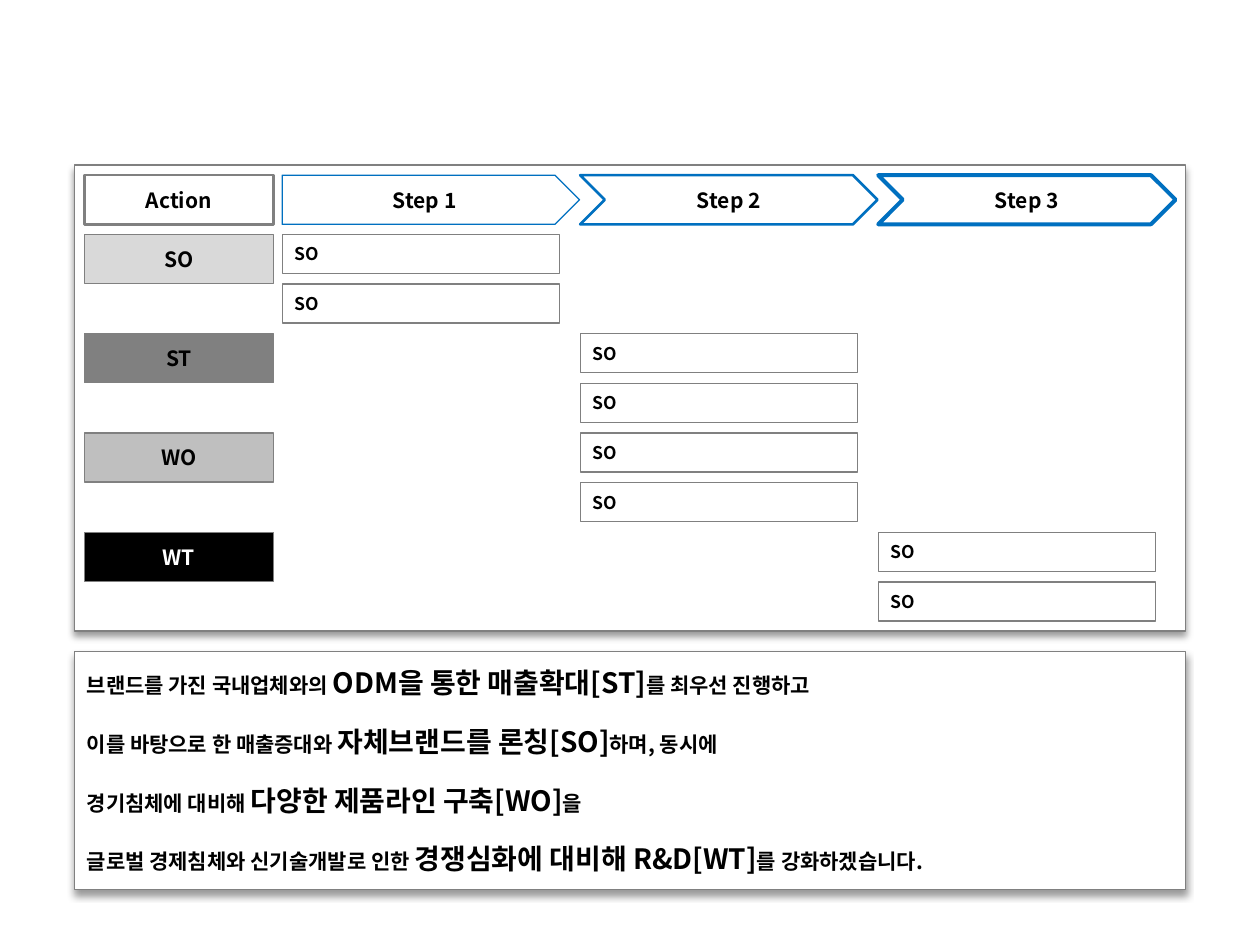
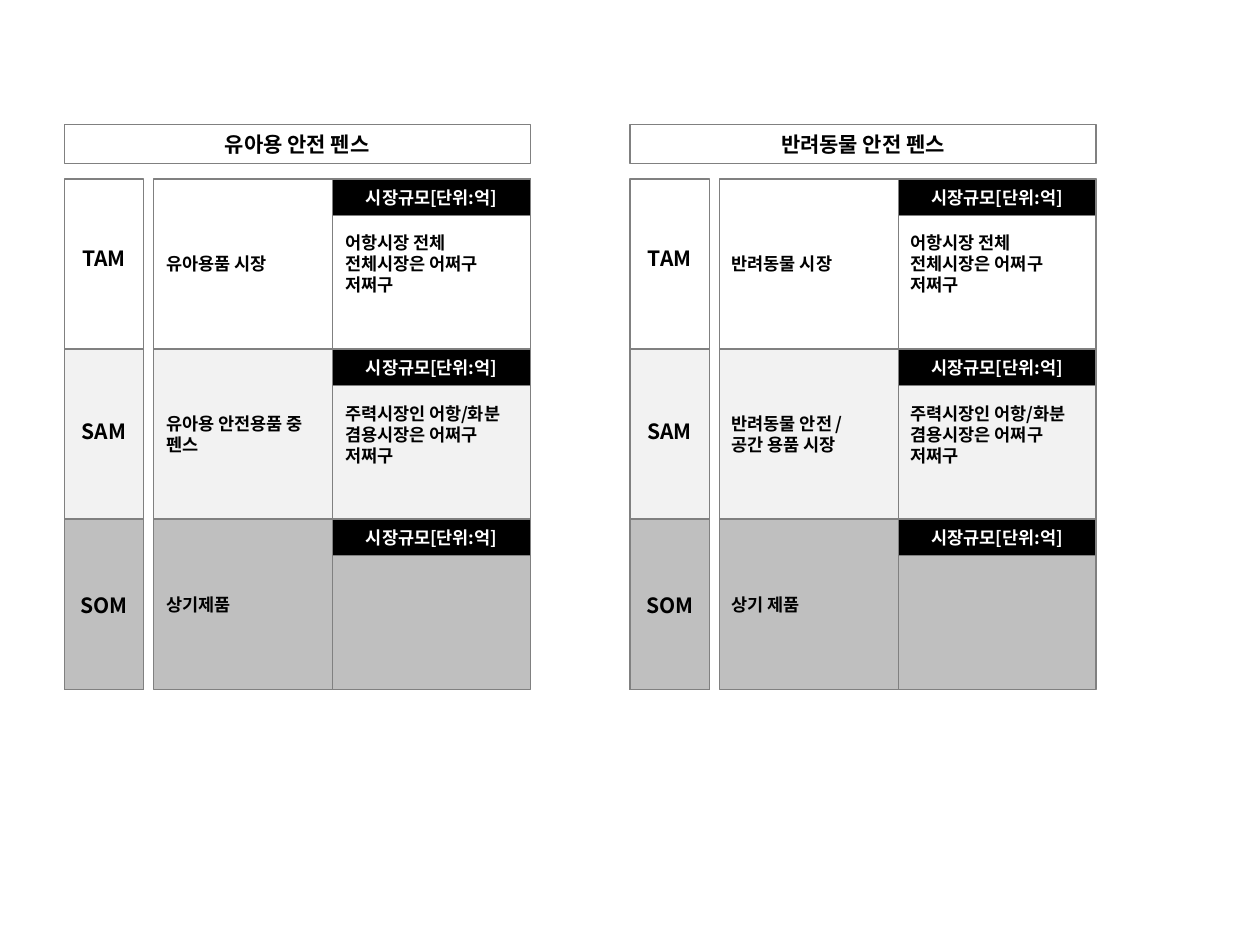
from lxml import etree
from pptx import Presentation
from pptx.dml.color import RGBColor
from pptx.enum.shapes import MSO_SHAPE
from pptx.enum.text import MSO_ANCHOR, PP_ALIGN
from pptx.oxml.ns import qn
from pptx.util import Inches, Pt

RECT, PENTAGON, CHEVRON = MSO_SHAPE.RECTANGLE, MSO_SHAPE.PENTAGON, MSO_SHAPE.CHEVRON
LEFT, CENTER = PP_ALIGN.LEFT, PP_ALIGN.CENTER
TOP, MIDDLE = MSO_ANCHOR.TOP, MSO_ANCHOR.MIDDLE

BLACK = RGBColor(0x00, 0x00, 0x00)
WHITE = RGBColor(0xFF, 0xFF, 0xFF)
GRAY = RGBColor(0x80, 0x80, 0x80)
SILVER = RGBColor(0xBF, 0xBF, 0xBF)
LIGHT = RGBColor(0xD9, 0xD9, 0xD9)
PALE = RGBColor(0xF2, 0xF2, 0xF2)
BLUE = RGBColor(0x00, 0x70, 0xC0)

FONT = "Noto Sans CJK KR"
LEADING = 1.2


class Deck:
    def __init__(self):
        self.prs = Presentation()
        self.prs.slide_width, self.prs.slide_height = Inches(10), Inches(7.5)
        self.slide = None

    def new_slide(self):
        self.slide = self.prs.slides.add_slide(self.prs.slide_layouts[6])

    def style(self, run, size, color):
        font = run.font
        font.size, font.bold = Pt(size), True
        font.color.rgb = color
        font.name = FONT
        etree.SubElement(font._rPr, qn("a:ea"), typeface=FONT)

    def box(self, x, y, w, h, text="", size=12, align=CENTER, fill=None,
            color=BLACK, line=GRAY, weight=0.75, kind=RECT):
        """Outlined shape with one bold paragraph in its middle."""
        shape = self.slide.shapes.add_shape(kind, Inches(x), Inches(y), Inches(w), Inches(h))
        shape.shadow.inherit = False
        if fill is None:
            shape.fill.background()
        else:
            shape.fill.solid()
            shape.fill.fore_color.rgb = fill
        shape.line.color.rgb = line
        shape.line.width = Pt(weight)
        frame = shape.text_frame
        frame.word_wrap, frame.vertical_anchor = True, MIDDLE
        if text:
            paragraph = frame.paragraphs[0]
            paragraph.text = text
            paragraph.alignment = align
            paragraph.line_spacing = Pt(size * LEADING)
            for run in paragraph.runs:
                self.style(run, size, color)
        return shape

    def panel(self, x, y, w, h):
        """White box with a soft shadow below it."""
        shape = self.box(x, y, w, h, fill=WHITE)
        effects = shape._element.spPr.find(qn("a:effectLst"))
        shadow = etree.SubElement(effects, qn("a:outerShdw"), blurRad=str(Pt(4)),
                                  dist=str(Pt(3)), dir="5400000", algn="t", rotWithShape="0")
        black = etree.SubElement(shadow, qn("a:srgbClr"), val=str(BLACK))
        etree.SubElement(black, qn("a:alpha"), val="40000")
        return shape

    def sentences(self, shape, lines):
        """Sentences whose middle part is set larger."""
        frame = shape.text_frame
        for i, parts in enumerate(lines):
            paragraph = frame.paragraphs[0] if i == 0 else frame.add_paragraph()
            paragraph.alignment = LEFT
            paragraph.line_spacing = Pt(16 * LEADING)
            if i:
                paragraph.space_before = Pt(12 * LEADING)
            for text, size in zip(parts, (12, 16, 12)):
                run = paragraph.add_run()
                run.text = text
                self.style(run, size, BLACK)


# Action plan
STEPS = [("Step 1", PENTAGON, 0.75), ("Step 2", CHEVRON, 1.5), ("Step 3", CHEVRON, 2.25)]
ACTIONS = [("SO", LIGHT, BLACK), ("ST", GRAY, BLACK), ("WO", SILVER, BLACK), ("WT", BLACK, WHITE)]
TASK_STEPS = [0, 0, 1, 1, 1, 1, 2, 2]
STEP_X, STEP_PITCH = 2.24, 2.365
TASK_Y, TASK_PITCH = 1.86, 0.394
STRATEGY = [
    ("브랜드를 가진 국내업체와의 ", "ODM을 통한 매출확대[ST]", "를 최우선 진행하고"),
    ("이를 바탕으로 한 매출증대와 ", "자체브랜드를 론칭[SO]", "하며, 동시에"),
    ("경기침체에 대비해 ", "다양한 제품라인 구축[WO]", "을"),
    ("글로벌 경제침체와 신기술개발로 인한 ", "경쟁심화에 대비해 R&D[WT]", "를 강화하겠습니다."),
]

# Market size
ROW_Y, ROW_H = 1.42, 1.35
LEVELS = [  # name, fill, gap above the name, market description
    ("TAM", None, 0.53, "어항시장 전체 전체시장은 어쩌구 저쩌구"),
    ("SAM", PALE, 0.55, "주력시장인 어항/화분 겸용시장은 어쩌구 저쩌구"),
    ("SOM", SILVER, 0.58, ""),
]
MARKETS = [
    (0.51, "유아용 안전 펜스", ["유아용품 시장", "유아용 안전용품 중 펜스", "상기제품"]),
    (5, "반려동물 안전 펜스", ["반려동물 시장", "반려동물 안전 /\v공간 용품 시장", "상기 제품"]),
]


def action_slide(deck):
    deck.new_slide()
    deck.panel(0.59, 1.31, 8.82, 3.7)
    # Header row
    deck.box(0.67, 1.39, 1.5, 0.39, "Action", weight=1.5)
    for i, (step, kind, weight) in enumerate(STEPS):
        deck.box(STEP_X + i * STEP_PITCH, 1.39, 2.36, 0.39, step,
                 line=BLUE, weight=weight, kind=kind)
    # Each action spans two task rows
    for i, (action, fill, color) in enumerate(ACTIONS):
        deck.box(0.67, TASK_Y + 2 * i * TASK_PITCH, 1.5, 0.39, action, fill=fill, color=color)
    for row, step in enumerate(TASK_STEPS):
        deck.box(STEP_X + step * STEP_PITCH, TASK_Y + row * TASK_PITCH, 2.2, 0.31,
                 "SO", size=10, align=LEFT)
    # Strategy summary
    deck.sentences(deck.panel(0.59, 5.17, 8.82, 1.89), STRATEGY)


def market_slide(deck):
    deck.new_slide()
    for x, title, segments in MARKETS:
        deck.box(x, 0.99, 3.7, 0.31, title)
        for i, (level, fill, gap, description) in enumerate(LEVELS):
            y = ROW_Y + i * ROW_H
            # Nested levels all reach down to the last row
            level_box = deck.box(x, y, 0.63, (len(LEVELS) - i) * ROW_H, level, fill=fill)
            level_box.text_frame.vertical_anchor = TOP
            level_box.text_frame.margin_top = Inches(gap)
            deck.box(x + 0.71, y, 1.42, ROW_H, segments[i], size=10, align=LEFT, fill=fill)
            deck.box(x + 2.13, y, 1.57, ROW_H, description, size=10, align=LEFT, fill=fill)
            deck.box(x + 2.13, y, 1.57, 0.29, "시장규모[단위:억]", size=10,
                     fill=BLACK, color=WHITE)


def main():
    deck = Deck()
    action_slide(deck)
    market_slide(deck)
    deck.prs.save("out.pptx")


if __name__ == "__main__":
    main()
